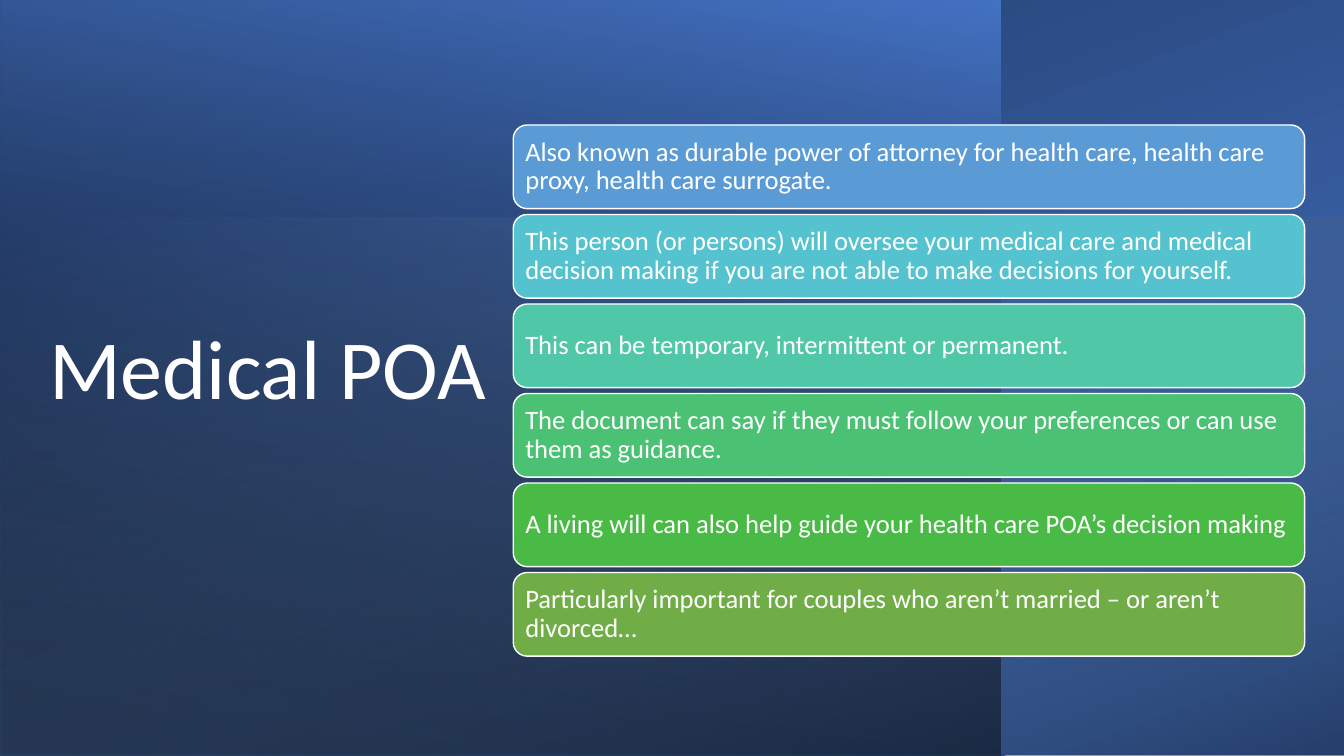
from dataclasses import dataclass

from lxml import etree
from pptx import Presentation
from pptx.dml.color import RGBColor
from pptx.enum.shapes import MSO_SHAPE
from pptx.enum.text import MSO_ANCHOR, PP_ALIGN
from pptx.oxml.ns import qn
from pptx.util import Inches, Pt

RECT = MSO_SHAPE.RECTANGLE
ROUND = MSO_SHAPE.ROUNDED_RECTANGLE
MIDDLE = MSO_ANCHOR.MIDDLE
LEFT = PP_ALIGN.LEFT


@dataclass(frozen=True)
class Theme:
    font: str = "Calibri"
    white: str = "FFFFFF"
    black: str = "000000"
    blue: str = "4472C4"
    navy: str = "203864"
    sky: str = "9DC3E6"
    title: int = 60
    body: int = 19


THEME = Theme()


@dataclass(frozen=True)
class Stop:
    place: int  # percent along the gradient
    color: str
    alpha: int = 100


@dataclass(frozen=True)
class Layer:
    left: float
    top: float
    width: float
    height: float
    turn: int
    angle: int
    stops: tuple[Stop, ...]


@dataclass(frozen=True)
class Card:
    color: str
    text: str


LAYERS = (
    Layer(2.92, -2.92, 7.5, 13.33, 270, 200,
          (Stop(8, THEME.blue), Stop(100, THEME.navy))),
    Layer(0, 0, 9.92, 7.5, 180, 80,
          (Stop(8, THEME.black, 52), Stop(100, THEME.blue))),
    Layer(3.99, -1.84, 5.35, 13.34, 270, 20,
          (Stop(0, THEME.sky, 0), Stop(100, THEME.black, 46))),
)

CARDS = (
    Card("5B9BD5", "Also known as durable power of attorney for health care, "
                   "health care proxy, health care surrogate."),
    Card("55C3CF", "This person (or persons) will oversee your medical care and medical "
                   "decision making if you are not able to make decisions for yourself."),
    Card("50C8A7", "This can be temporary, intermittent or permanent."),
    Card("4BC174", "The document can say if they must follow your preferences "
                   "or can use them as guidance."),
    Card("4ABA46", "A living will can also help guide your health care POA’s decision making"),
    Card("70AD47", "Particularly important for couples who aren’t married – or aren’t divorced…"),
)

# Card column
CARD_LEFT, CARD_WIDTH, CARD_HEIGHT = 5.09, 7.85, 0.83
CARD_TOP, CARD_END = 1.24, 5.68
CARD_STEP = (CARD_END - CARD_TOP) / (len(CARDS) - 1)


def add_box(slide, kind, left: float, top: float, width: float, height: float):
    shape = slide.shapes.add_shape(
        kind, Inches(left), Inches(top), Inches(width), Inches(height))
    shape.shadow.inherit = False
    return shape


def add_layer(slide, layer: Layer) -> None:
    shape = add_box(slide, RECT, layer.left, layer.top, layer.width, layer.height)
    shape.rotation = layer.turn
    shape.line.fill.background()
    shape.fill.gradient()
    shape.fill.gradient_angle = 0
    props = shape._element.spPr
    props.find(qn("a:xfrm")).set("flipH", "1")

    # Gradient stops with transparency
    grad = props.find(qn("a:gradFill"))
    grad.find(qn("a:lin")).set("ang", str(layer.angle * 60000))
    grad.find(qn("a:lin")).set("scaled", "0")
    stops = grad.find(qn("a:gsLst"))
    for old in list(stops):
        stops.remove(old)
    for stop in layer.stops:
        mark = etree.SubElement(stops, qn("a:gs"), pos=str(stop.place * 1000))
        color = etree.SubElement(mark, qn("a:srgbClr"), val=stop.color)
        if stop.alpha < 100:
            etree.SubElement(color, qn("a:alpha"), val=str(stop.alpha * 1000))


def add_text(shape, text: str, size: int) -> None:
    frame = shape.text_frame
    frame.word_wrap = True
    frame.vertical_anchor = MIDDLE
    line = frame.paragraphs[0]
    line.alignment = LEFT
    line.line_spacing = 0.9
    run = line.add_run()
    run.text = text
    run.font.name = THEME.font
    run.font.size = Pt(size)
    run.font.color.rgb = RGBColor.from_string(THEME.white)


def add_card(slide, card: Card, top: float) -> None:
    shape = add_box(slide, ROUND, CARD_LEFT, top, CARD_WIDTH, CARD_HEIGHT)
    shape.fill.solid()
    shape.fill.fore_color.rgb = RGBColor.from_string(card.color)
    shape.line.color.rgb = RGBColor.from_string(THEME.white)
    shape.line.width = Pt(1)
    frame = shape.text_frame
    frame.margin_left = frame.margin_right = Inches(0.08)
    frame.margin_top = frame.margin_bottom = Inches(0.08)
    add_text(shape, card.text, THEME.body)


def main() -> None:
    deck = Presentation()
    deck.slide_width, deck.slide_height = Inches(13.33), Inches(7.5)
    slide = deck.slides.add_slide(deck.slide_layouts[6])

    # Background
    for layer in LAYERS:
        add_layer(slide, layer)

    # Title
    title = slide.shapes.add_textbox(
        Inches(0.39), Inches(0.68), Inches(4.8), Inches(6.02))
    add_text(title, "Medical POA", THEME.title)

    # Cards
    for row, card in enumerate(CARDS):
        add_card(slide, card, CARD_TOP + row * CARD_STEP)

    deck.save("out.pptx")


if __name__ == "__main__":
    main()
